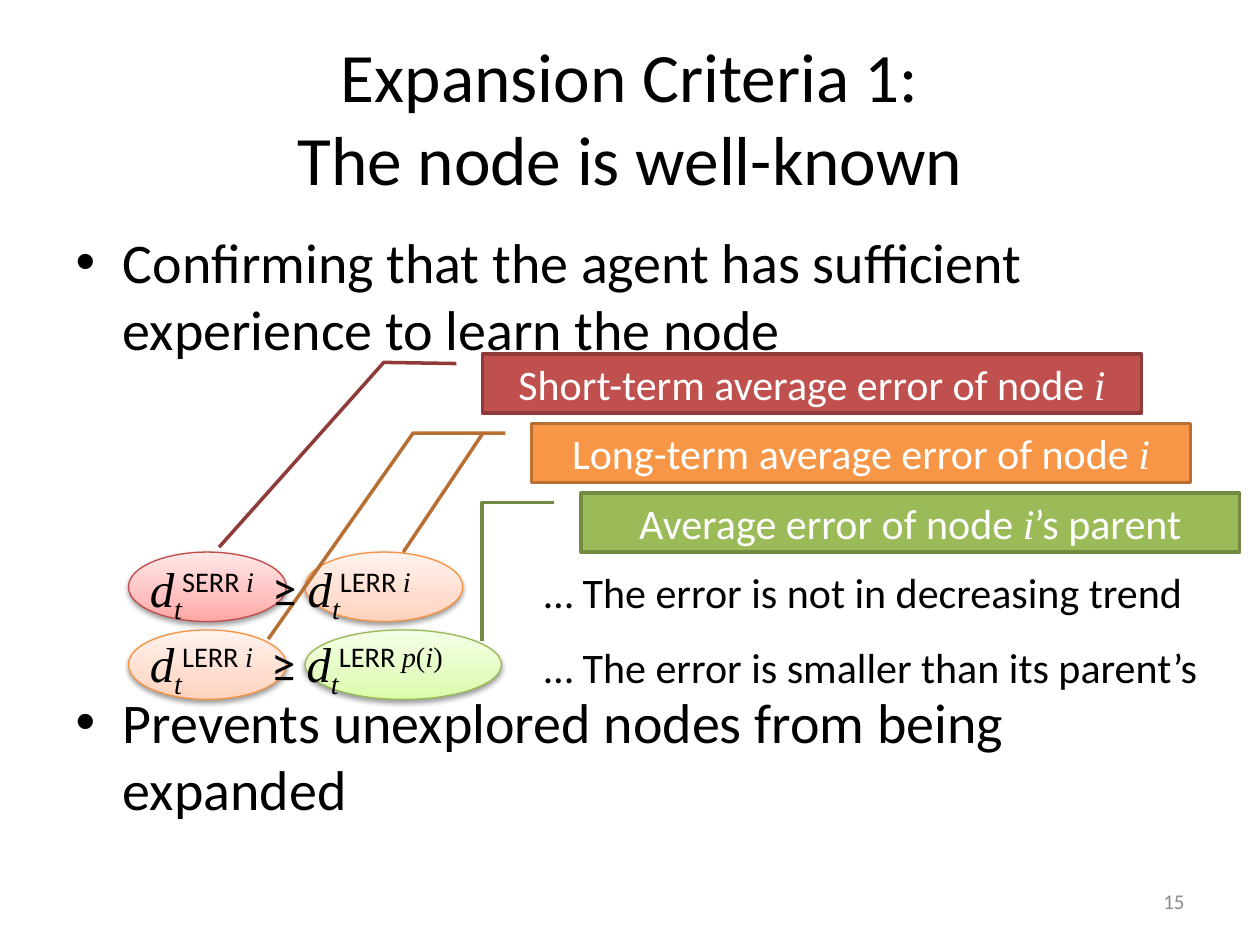
import copy
from dataclasses import dataclass

import pptx
import pptx.dml.color
import pptx.enum.shapes
import pptx.enum.text
import pptx.oxml
import pptx.oxml.ns
import pptx.util

Cm, Pt = pptx.util.Cm, pptx.util.Pt
SHAPE = pptx.enum.shapes.MSO_SHAPE
ALIGN = pptx.enum.text.PP_ALIGN
ANCHOR = pptx.enum.text.MSO_ANCHOR


@dataclass(frozen=True)
class Tone:
    """Colours of one quantity: callout fill and line, ellipse line and gradient."""
    fill: str
    edge: str
    rim: str = ""
    glow: tuple = ()


@dataclass(frozen=True)
class Theme:
    sans: str = "Calibri"
    serif: str = "Times New Roman"
    ink: str = "000000"
    light: str = "FFFFFF"
    muted: str = "8C8C8C"
    title: float = 39.6
    body: float = 32
    formula: float = 28
    label: float = 24
    number: float = 12
    short: Tone = Tone("C0504D", "8E3B39", "BF4C48", ("FFA6A5", "FFC0BF", "FFE7E7"))
    long: Tone = Tone("F79646", "B76F34", "F69240", ("FFD2BD", "FFDED0", "FFF2ED"))
    parent: Tone = Tone("9BBB59", "738A42", "98B955", ("DAFDA7", "E4FCC2", "F5FFE7"))


@dataclass(frozen=True)
class Box:
    """A region in centimetres."""
    left: float
    top: float
    width: float
    height: float

    def within(self, dx, dy, width, height):
        return Box(self.left + dx, self.top + dy, width, height)

    def lengths(self):
        return Cm(self.left), Cm(self.top), Cm(self.width), Cm(self.height)


THEME = Theme()
SHADOW = (
    '<a:effectLst %s><a:outerShdw blurRad="40000" dist="20000" dir="5400000" rotWithShape="0">'
    '<a:srgbClr val="000000"><a:alpha val="38000"/></a:srgbClr></a:outerShdw></a:effectLst>'
    % pptx.oxml.ns.nsdecls("a")
)


def rgb(colour):
    return pptx.dml.color.RGBColor.from_string(colour)


def add_run(paragraph, text, size, colour=THEME.ink, variable=False, baseline=0):
    """Add one run; a variable is set in italic serif."""
    run = paragraph.add_run()
    run.text = text
    run.font.size = Pt(size)
    run.font.color.rgb = rgb(colour)
    run.font.name = THEME.serif if variable else THEME.sans
    run.font.italic = variable
    if baseline:
        run.font._element.set("baseline", str(baseline * 1000))
    return run


def add_text_line(slide, box):
    frame = slide.shapes.add_textbox(*box.lengths()).text_frame
    frame.word_wrap = True
    return frame.paragraphs[0]


def place(placeholder, box):
    placeholder.left, placeholder.top, placeholder.width, placeholder.height = box.lengths()
    placeholder.text_frame.auto_size = pptx.enum.text.MSO_AUTO_SIZE.NONE
    return placeholder.text_frame


def write_title(slide, box):
    frame = place(slide.shapes.title, box)
    frame.vertical_anchor = ANCHOR.MIDDLE
    heading = frame.paragraphs[0]
    heading.alignment = ALIGN.CENTER
    add_run(heading, "Expansion Criteria 1:", THEME.title)
    heading.add_line_break()
    add_run(heading, "The node is well-known", THEME.title)


def write_bullets(slide, box):
    """Write both bullets in front of the ellipses, leaving room for the criteria."""
    body = slide.placeholders[1]
    slide.shapes.element.append(body.element)
    frame = place(body, box)
    add_run(frame.paragraphs[0],
            "Confirming that the agent has sufficient experience to learn the node", THEME.body)
    effect = frame.add_paragraph()
    effect.space_before = Pt(186)
    add_run(effect, "Prevents unexplored nodes from being expanded", THEME.body)


def draw_ellipse(slide, box, tone):
    ellipse = slide.shapes.add_shape(SHAPE.OVAL, *box.lengths())
    ellipse.line.color.rgb = rgb(tone.rim)
    ellipse.line.width = Pt(0.75)
    ellipse.fill.gradient()
    ellipse.fill.gradient_angle = 90
    stop_list = ellipse.element.xpath("./p:spPr/a:gradFill/a:gsLst")[0]
    stop_list.append(copy.deepcopy(stop_list[0]))
    for stop, position, colour in zip(ellipse.fill.gradient_stops, (0, 0.35, 1), tone.glow):
        stop.position = position
        stop.color.rgb = rgb(colour)
    ellipse.element.spPr.append(pptx.oxml.parse_xml(SHADOW))


def draw_ellipses(slide, box):
    rows = ((THEME.short, THEME.long, 3.18), (THEME.long, THEME.parent, 3.96))
    for row, (left_tone, right_tone, right_width) in enumerate(rows):
        top = row * 1.57
        draw_ellipse(slide, box.within(0, top, 3.18, 1.4), left_tone)
        draw_ellipse(slide, box.within(3.56, top, right_width, 1.4), right_tone)


def write_error_term(paragraph, kind, indices):
    """Write d with subscript t and a superscript of kind and indices."""
    add_run(paragraph, "d", THEME.formula, variable=True)
    add_run(paragraph, "t", THEME.formula, variable=True, baseline=-25)
    add_run(paragraph, kind + " ", THEME.formula, baseline=30)
    for text, italic in indices:
        run = add_run(paragraph, text, THEME.formula, variable=True, baseline=30)
        run.font.italic = italic


def write_criteria(slide, box):
    node = [("i", True)]
    parent = [("p", True), ("(", False), ("i", True), (")", False)]
    criteria = (
        ("SERR", node, "… The error is not in decreasing trend"),
        ("LERR", parent, "… The error is smaller than its parent’s"),
    )
    for row, (left_kind, right_indices, meaning) in enumerate(criteria):
        formula = add_text_line(slide, box.within(0.18, row * 1.52, 7.54, 1.45))
        write_error_term(formula, left_kind, [("i ", True)])
        add_run(formula, " ≥ ", THEME.formula)
        write_error_term(formula, "LERR", right_indices)
        caption = add_text_line(slide, box.within(8.13, 0.17 + row * 1.5, 13.69, 1.27))
        add_run(caption, meaning, THEME.label)


def draw_callouts(slide, box):
    """Draw the staircase of callouts and the second leader of the middle one."""
    callouts = (
        (THEME.short, "Short-term average error of node ", "", (0.14, -0.15, 3.27, -0.4)),
        (THEME.long, "Long-term average error of node ", "", (0.16, -0.18, 3.65, -0.4)),
        (THEME.parent, "Average error of node ", "’s parent", (0.16, -0.15, 2.51, -0.15)),
    )
    for step, (tone, before, after, leader) in enumerate(callouts):
        area = box.within(step * 0.99, step * 1.4, 13.28, 1.19)
        callout = slide.shapes.add_shape(SHAPE.LINE_CALLOUT_2, *area.lengths())
        callout.shadow.inherit = False
        for index, value in enumerate((0.16, -0.04) + leader):
            callout.adjustments[index] = value
        callout.fill.solid()
        callout.fill.fore_color.rgb = rgb(tone.fill)
        callout.line.color.rgb = rgb(tone.edge)
        callout.line.width = Pt(2)
        callout.text_frame.vertical_anchor = ANCHOR.MIDDLE
        label = callout.text_frame.paragraphs[0]
        label.alignment = ALIGN.CENTER
        add_run(label, before, THEME.label, THEME.light)
        add_run(label, "i", THEME.label, THEME.light, variable=True)
        if after:
            add_run(label, after, THEME.label, THEME.light)

    branch = slide.shapes.add_connector(
        pptx.enum.shapes.MSO_CONNECTOR.STRAIGHT,
        Cm(box.left), Cm(box.top + 1.6), Cm(box.left - 1.6), Cm(box.top + 3.99))
    branch.line.color.rgb = rgb(THEME.long.edge)
    branch.line.width = Pt(2)
    branch.element.spPr.append(
        pptx.oxml.parse_xml("<a:effectLst %s/>" % pptx.oxml.ns.nsdecls("a")))


def write_slide_number(slide, box):
    number = add_text_line(slide, box)
    number.alignment = ALIGN.RIGHT
    add_run(number, "15", THEME.number, THEME.muted)


def main():
    deck = pptx.Presentation()
    deck.slide_width, deck.slide_height = Cm(25.4), Cm(19.05)
    slide = deck.slides.add_slide(deck.slide_layouts[1])
    criteria_box = Box(2.59, 11.13, 21.82, 2.97)
    write_title(slide, Box(1.27, 0.76, 22.86, 3.18))
    draw_ellipses(slide, criteria_box)
    write_bullets(slide, Box(1.27, 4.45, 22.86, 12.57))
    draw_callouts(slide, Box(9.73, 7.14, 15.26, 3.99))
    write_criteria(slide, criteria_box)
    write_slide_number(slide, Box(18.21, 17.78, 5.92, 0.76))
    deck.save("out.pptx")


if __name__ == "__main__":
    main()
